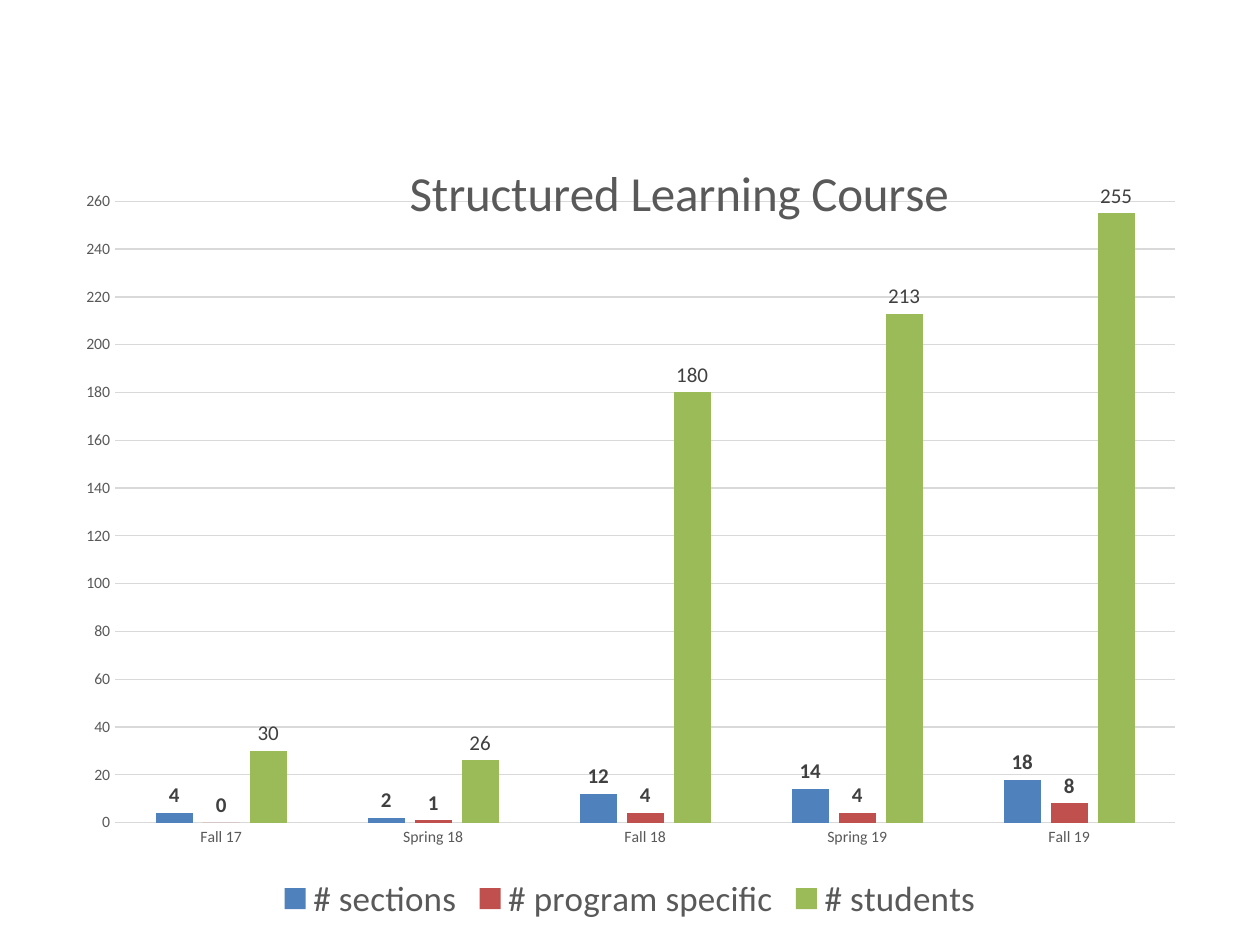
import pptx
import pptx.chart.data
import pptx.dml.color
import pptx.enum.chart
import pptx.oxml
import pptx.util
from pptx.oxml.ns import qn

RGBColor = pptx.dml.color.RGBColor
Pt = pptx.util.Pt
Inches = pptx.util.Inches
enums = pptx.enum.chart

FONT = "Calibri"
BLACK = RGBColor(0x00, 0x00, 0x00)
LABEL_GRAY = RGBColor(0x40, 0x40, 0x40)
TEXT_GRAY = RGBColor(0x59, 0x59, 0x59)
LINE_GRAY = RGBColor(0xD9, 0xD9, 0xD9)
BLUE = RGBColor(0x4F, 0x81, 0xBD)
RED = RGBColor(0xC0, 0x50, 0x4D)
GREEN = RGBColor(0x9B, 0xBB, 0x59)

TITLE = "Structured Learning Course"
TERMS = ["Fall 17", "Spring 18", "Fall 18", "Spring 19", "Fall 19"]
SERIES = [  # name, values, colour, bold labels
    ("# sections", (4, 2, 12, 14, 18), BLUE, True),
    ("# program specific", (0, 1, 4, 4, 8), RED, True),
    ("# students", (30, 26, 180, 213, 255), GREEN, False),
]
CHART_BOX = (0.52, 1.07, 8.96, 6.29)  # inches
# Shares of the chart's size
PLOT_LAYOUT = {"layoutTarget": "inner", "xMode": "edge", "yMode": "edge",
               "x": 0.044, "y": 0.084, "w": 0.939, "h": 0.784}
TITLE_LAYOUT = {"xMode": "edge", "yMode": "edge", "x": 0.297, "y": 0.02}


def style_font(font, size, color, bold=False):
    font.name = FONT
    font.size = Pt(size)
    font.bold = bold
    font.color.rgb = color


def style_line(line, color):
    line.width = Pt(0.75)
    line.color.rgb = color


def set_layout(parent, index, settings):
    """Give a chart part a manual layout, as its child at the index."""
    for old_layout in parent.findall(qn("c:layout")):
        parent.remove(old_layout)
    items = "".join(f'<c:{name} val="{value}"/>' for name, value in settings.items())
    namespace = "http://schemas.openxmlformats.org/drawingml/2006/chart"
    parent.insert(index, pptx.oxml.parse_xml(
        f'<c:layout xmlns:c="{namespace}"><c:manualLayout>{items}'
        "</c:manualLayout></c:layout>"))


def add_title(chart):
    text_frame = chart.chart_title.text_frame
    text_frame.text = TITLE
    style_font(text_frame.paragraphs[0].runs[0].font, 28, TEXT_GRAY)
    title = chart.element.find(".//" + qn("c:title"))
    set_layout(title, 1, TITLE_LAYOUT)
    title.find(qn("c:overlay")).set("val", "1")


def style_axes(chart):
    for axis in (chart.category_axis, chart.value_axis):
        axis.major_tick_mark = enums.XL_TICK_MARK.NONE
        axis.minor_tick_mark = enums.XL_TICK_MARK.NONE
        style_font(axis.tick_labels.font, 9, TEXT_GRAY)
    style_line(chart.category_axis.format.line, LINE_GRAY)
    value_axis = chart.value_axis
    value_axis.minimum_scale = 0
    value_axis.maximum_scale = 260
    value_axis.major_unit = 20
    value_axis.format.line.fill.background()
    style_line(value_axis.major_gridlines.format.line, LINE_GRAY)


def style_series(plot):
    plot.gap_width = 219
    plot.overlap = -27
    plot.vary_by_categories = False
    for series, (_, _, color, bold) in zip(plot.series, SERIES):
        series.format.fill.solid()
        series.format.fill.fore_color.rgb = color
        series.invert_if_negative = False
        labels = series.data_labels
        labels.show_value = True
        labels.position = enums.XL_LABEL_POSITION.OUTSIDE_END
        style_font(labels.font, 12, LABEL_GRAY, bold)


def main():
    presentation = pptx.Presentation()
    presentation.slide_width, presentation.slide_height = Inches(10), Inches(7.5)
    slide = presentation.slides.add_slide(presentation.slide_layouts[6])

    data = pptx.chart.data.CategoryChartData()
    data.categories = TERMS
    for name, values, _, _ in SERIES:
        data.add_series(name, values)
    chart = slide.shapes.add_chart(
        enums.XL_CHART_TYPE.COLUMN_CLUSTERED, *map(Inches, CHART_BOX), data).chart

    style_font(chart.font, 10, BLACK)
    add_title(chart)
    style_axes(chart)
    style_series(chart.plots[0])
    set_layout(chart.element.find(".//" + qn("c:plotArea")), 0, PLOT_LAYOUT)
    chart.has_legend = True
    chart.legend.position = enums.XL_LEGEND_POSITION.BOTTOM
    chart.legend.include_in_layout = False
    style_font(chart.legend.font, 20, TEXT_GRAY)

    presentation.save("out.pptx")


if __name__ == "__main__":
    main()
